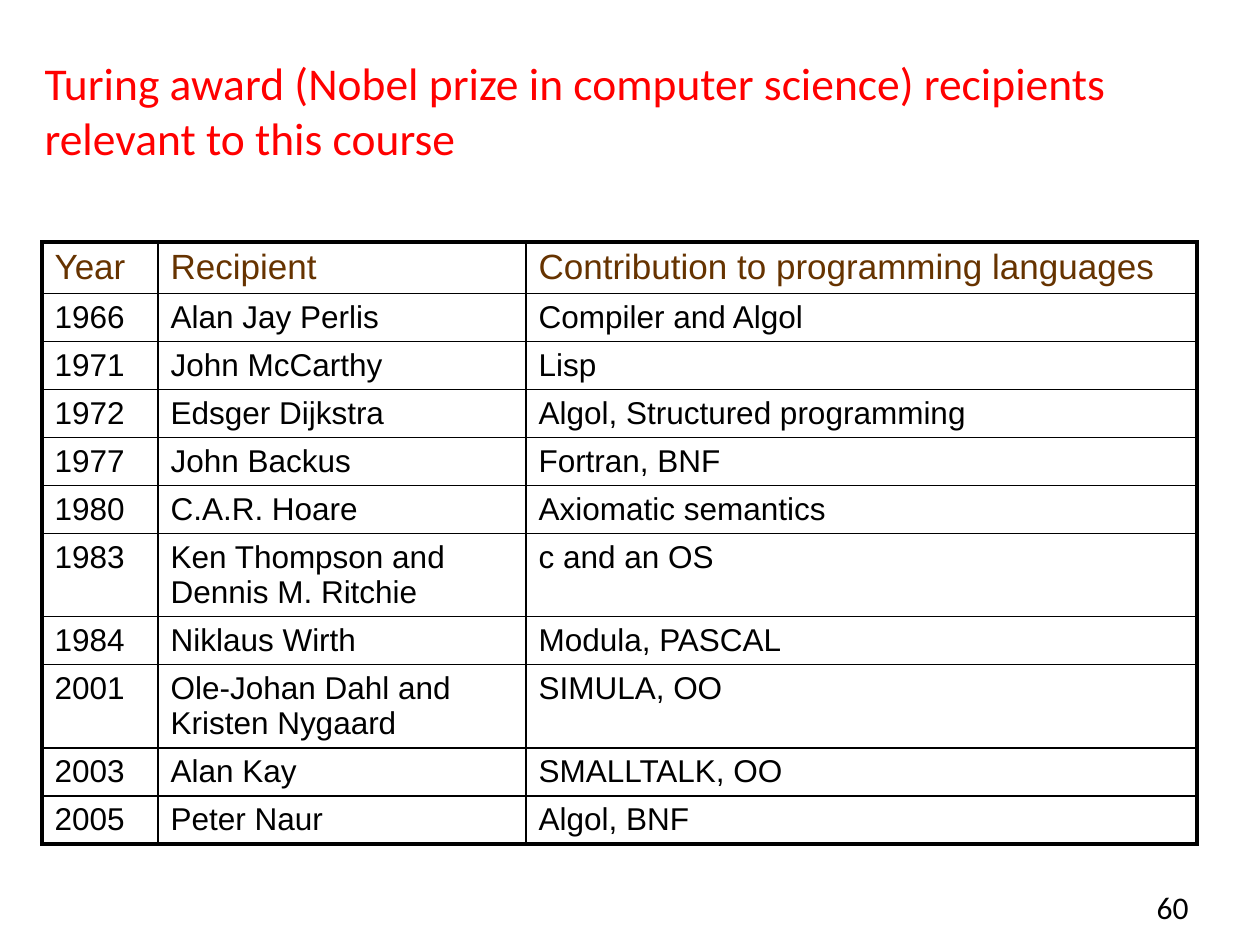
import dataclasses

import pptx
import pptx.dml.color
import pptx.enum.text
import pptx.oxml
import pptx.oxml.ns
import pptx.util

PX_PER_INCH = 126


@dataclasses.dataclass(frozen=True)
class Theme:
    title_font: str = "Calibri"
    table_font: str = "Arial"
    title_color: str = "FF0000"
    header_color: str = "663300"
    text_color: str = "000000"
    border_color: str = "000000"
    title_size: int = 26
    header_size: int = 20
    body_size: int = 18
    outer_border: float = 2.25
    inner_border: float = 1


THEME = Theme()
COLUMN_WIDTHS = (116, 368, 671)
HEADER_HEIGHT, LINE_HEIGHT, TWO_LINE_HEIGHT = 51, 48, 83
TWO_LINE_YEARS = ("1983", "2001")
AWARDS = (
    ("Year", "Recipient", "Contribution to programming languages"),
    ("1966", "Alan Jay Perlis", "Compiler and Algol"),
    ("1971", "John McCarthy", "Lisp"),
    ("1972", "Edsger Dijkstra", "Algol, Structured programming"),
    ("1977", "John Backus", "Fortran, BNF"),
    ("1980", "C.A.R. Hoare", "Axiomatic semantics"),
    ("1983", "Ken Thompson and Dennis M. Ritchie", "c and an OS"),
    ("1984", "Niklaus Wirth", "Modula, PASCAL"),
    ("2001", "Ole-Johan Dahl and Kristen Nygaard", "SIMULA, OO"),
    ("2003", "Alan Kay", "SMALLTALK, OO"),
    ("2005", "Peter Naur", "Algol, BNF"),
)


def px(length):
    return pptx.util.Emu(round(length * 914400 / PX_PER_INCH))


def write(text_frame, text, font, size, color, align=pptx.enum.text.PP_ALIGN.LEFT):
    text_frame.text = text
    text_frame.word_wrap = True
    paragraph = text_frame.paragraphs[0]
    paragraph.alignment = align
    run_font = paragraph.runs[0].font
    run_font.name = font
    run_font.size = pptx.util.Pt(size)
    run_font.bold = False
    run_font.color.rgb = pptx.dml.color.RGBColor.from_string(color)


def add_border(cell, side, width):
    """Draw one side of a cell: L, R, T or B, in that order."""
    border = pptx.oxml.parse_xml(
        f'<a:ln{side} {pptx.oxml.ns.nsdecls("a")} w="{pptx.util.Pt(width)}">'
        f'<a:solidFill><a:srgbClr val="{THEME.border_color}"/></a:solidFill>'
        f'<a:prstDash val="solid"/></a:ln{side}>'
    )
    cell._tc.get_or_add_tcPr().append(border)


def place_title(slide, left, top, width, height):
    title = slide.shapes.title
    title.left, title.top, title.width, title.height = map(px, (left, top, width, height))
    write(title.text_frame,
          "Turing award (Nobel prize in computer science) recipients relevant to this course",
          THEME.title_font, THEME.title_size, THEME.title_color)
    title.text_frame.auto_size = pptx.enum.text.MSO_AUTO_SIZE.NONE
    title.text_frame.vertical_anchor = pptx.enum.text.MSO_ANCHOR.MIDDLE


def row_height(row, year):
    if row == 0:
        return HEADER_HEIGHT
    return TWO_LINE_HEIGHT if year in TWO_LINE_YEARS else LINE_HEIGHT


def format_award_cell(cell, text, row, column):
    is_header = row == 0
    write(cell.text_frame, text, THEME.table_font,
          THEME.header_size if is_header else THEME.body_size,
          THEME.header_color if is_header else THEME.text_color)
    on_edge = {
        "L": column == 0,
        "R": column == len(COLUMN_WIDTHS) - 1,
        "T": is_header,
        "B": row == len(AWARDS) - 1,
    }
    for side, is_outer in on_edge.items():
        add_border(cell, side, THEME.outer_border if is_outer else THEME.inner_border)
    cell.fill.background()


def add_award_table(slide, left, top):
    heights = [row_height(row, award[0]) for row, award in enumerate(AWARDS)]
    awards = slide.shapes.add_table(
        len(AWARDS), len(COLUMN_WIDTHS),
        px(left), px(top), px(sum(COLUMN_WIDTHS)), px(sum(heights)),
    ).table
    awards.first_row = awards.horz_banding = False
    for column, width in enumerate(COLUMN_WIDTHS):
        awards.columns[column].width = px(width)
    for row, award in enumerate(AWARDS):
        awards.rows[row].height = px(heights[row])
        for column, text in enumerate(award):
            format_award_cell(awards.cell(row, column), text, row, column)


def add_page_number(slide, left, top, width, height):
    page_number = slide.shapes.add_textbox(*map(px, (left, top, width, height)))
    write(page_number.text_frame, "60 ", THEME.title_font, THEME.body_size,
          THEME.text_color, pptx.enum.text.PP_ALIGN.RIGHT)


def main():
    deck = pptx.Presentation()
    deck.slide_width, deck.slide_height = px(1260), px(945)
    slide = deck.slides.add_slide(deck.slide_layouts.get_by_name("Title Only"))
    place_title(slide, 32, 42, 1166, 136)
    add_award_table(slide, 42, 242)
    add_page_number(slide, 1124, 882, 84, 63)
    deck.save("out.pptx")


if __name__ == "__main__":
    main()
